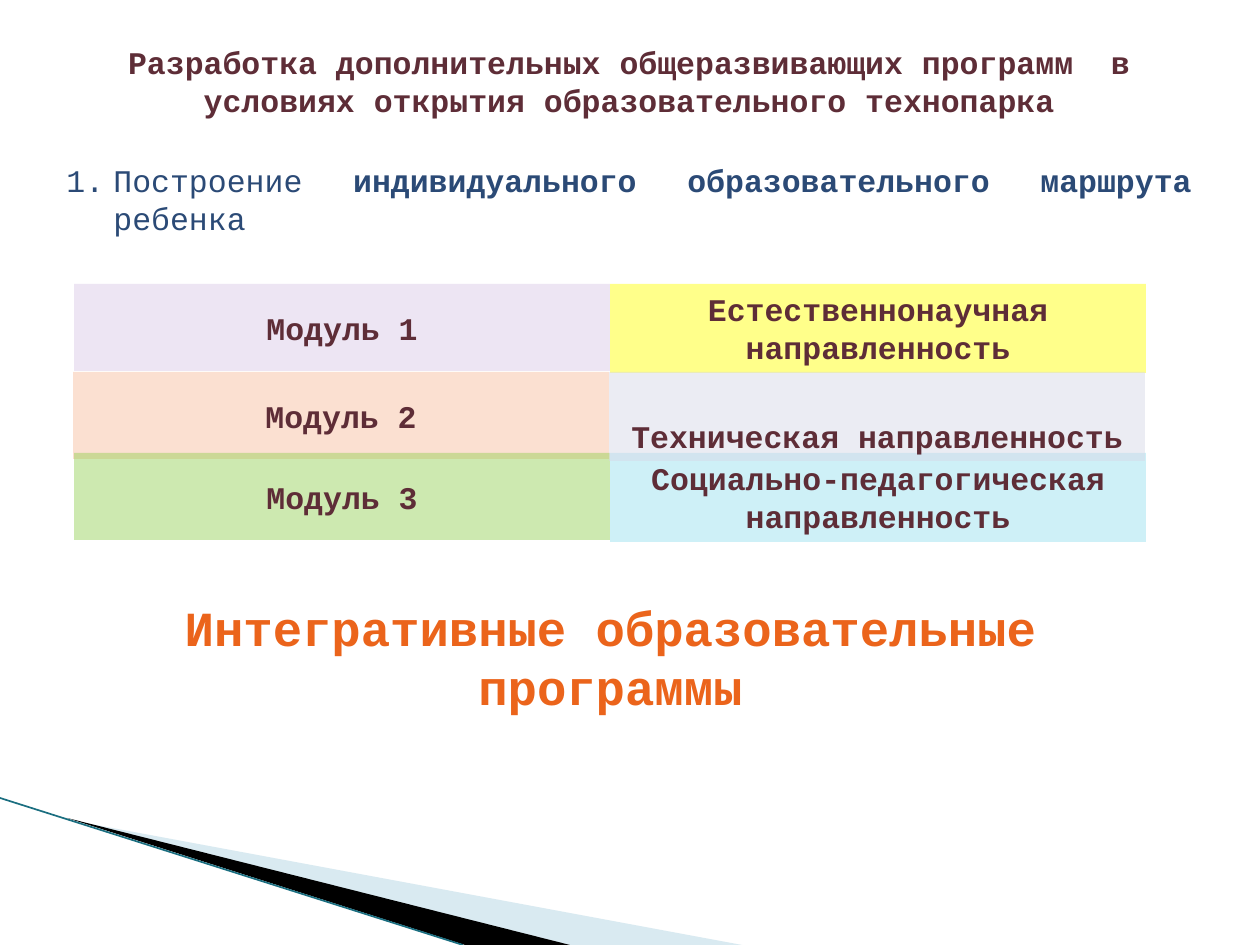
from lxml import etree
from pptx import Presentation, util as u
from pptx.dml.color import RGBColor
from pptx.enum import shapes as sh, text as tx
from pptx.oxml.ns import qn

PX = 914400 / 126
WINE, NAVY, ORANGE = "5E2D37", "2B4A76", "EB641B"


def px(*vals):
    return [u.Emu(round(v * PX)) for v in vals]


def paint(fill, hue, alpha=100):
    """Solid fill with an opacity in percent."""
    fill.solid()
    fill.fore_color.rgb = RGBColor.from_string(hue)
    if alpha < 100:
        clr = fill._xPr.find(".//" + qn("a:srgbClr"))
        etree.SubElement(clr, qn("a:alpha"), val=str(alpha * 1000))


prs = Presentation()
prs.slide_width, prs.slide_height = px(1260, 945)
slide = prs.slides.add_slide(prs.slide_layouts[5])
items = slide.shapes

# Corner wedges and their edge line
wedges = [
    ([(69, 820), (742, 945), (570, 945)], "A0CBDC", 40),
    ([(67, 818), (570, 945), (465, 945)], "000000", 100),
]
for pts, hue, alpha in wedges:
    pen = items.build_freeform(*pts[0], scale=PX)
    pen.add_line_segments(pts[1:], close=True)
    wedge = pen.convert_to_shape()
    wedge.shadow.inherit = False
    wedge.line.fill.background()
    paint(wedge.fill, hue, alpha)

edge = items.add_connector(sh.MSO_CONNECTOR.STRAIGHT, *px(0, 798, 463, 945))
edge.line.width = u.Pt(0.95)
edge.line.color.rgb = RGBColor.from_string("1A6E80")
etree.SubElement(edge._element.spPr, qn("a:effectLst"))

# Each entry: shape, anchor, alignment, size, colour, runs of (words, bold)
TOP, MID, LOW = (tx.MSO_ANCHOR.TOP, tx.MSO_ANCHOR.MIDDLE, tx.MSO_ANCHOR.BOTTOM)
MIDDLE, FULL = tx.PP_ALIGN.CENTER, tx.PP_ALIGN.JUSTIFY
title = items.title
title.left, title.top, title.width, title.height = px(54, 37, 1150, 89)
goal = items.add_textbox(*px(54, 155, 1150, 89))
sum_up = items.add_textbox(*px(37, 591, 1147, 72))
blocks = [
    (title, TOP, MIDDLE, 18, WINE,
     [("Разработка дополнительных общеразвивающих программ  в условиях "
       "открытия образовательного технопарка", True)]),
    (goal, TOP, FULL, 18, NAVY,
     [("Построение", False),
      (" индивидуального образовательного маршрута ", True),
      ("ребенка", False)]),
    (sum_up, TOP, MIDDLE, 28, ORANGE,
     [("Интегративные образовательные программы", True)]),
]

# Module grid, back to front: left, top, height, fill, opacity, anchor, words
cells = [
    (73, 372, 87, "FBE0D1", 100, MID, "Модуль 2"),
    (74, 453, 87, "92D050", 45, MID, "Модуль 3"),
    (610, 453, 89, "B5E9F4", 66, TOP, "Социально-педагогическая направленность"),
    (74, 284, 87, "7030A0", 12, MID, "Модуль 1"),
    (610, 284, 89, "FFFF00", 46, TOP, "Естественнонаучная направленность"),
    (609, 372, 89, "D7D8E7", 48, LOW, "Техническая направленность"),
]
for left, top, high, hue, alpha, anchor, words in cells:
    cell = items.add_shape(sh.MSO_SHAPE.RECTANGLE, *px(left, top, 536, high))
    cell.shadow.inherit = False
    cell.line.fill.background()
    paint(cell.fill, hue, alpha)
    blocks.append((cell, anchor, MIDDLE, 18, WINE, [(words, True)]))

for shape, anchor, align, size, hue, runs in blocks:
    frame = shape.text_frame
    frame.word_wrap = True
    frame.auto_size = tx.MSO_AUTO_SIZE.NONE
    frame.vertical_anchor = anchor
    para = frame.paragraphs[0]
    para.alignment = align
    if shape is goal:
        props = para._p.get_or_add_pPr()
        indent = px(47)[0]
        props.set("marL", str(indent))
        props.set("indent", str(-indent))
        etree.SubElement(props, qn("a:buFont"), typeface="+mj-lt")
        etree.SubElement(props, qn("a:buAutoNum"), type="arabicPeriod")
    for words, bold in runs:
        run = para.add_run()
        run.text = words
        run.font.name = "Courier New"
        run.font.size = u.Pt(size)
        run.font.bold = bold
        run.font.color.rgb = RGBColor.from_string(hue)

prs.save("out.pptx")
